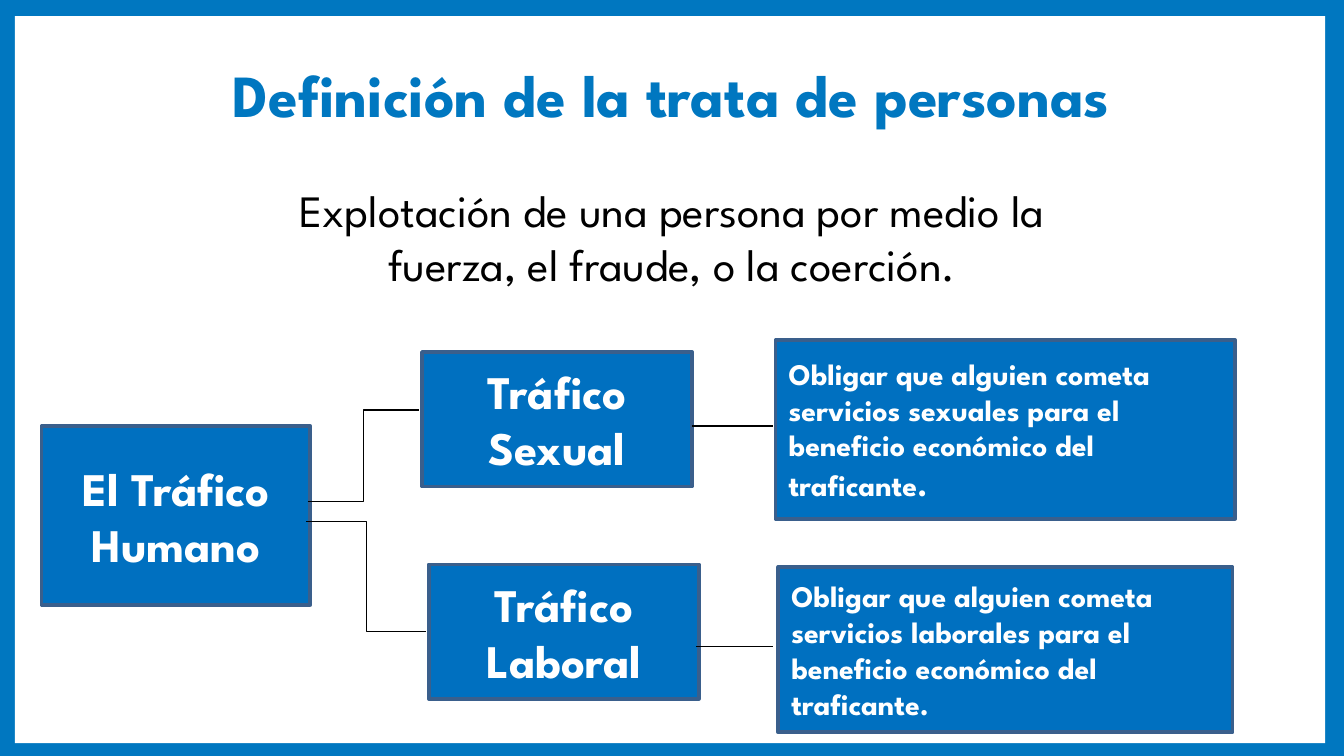
from dataclasses import dataclass

from lxml.etree import SubElement
from pptx import Presentation
from pptx.dml.color import RGBColor
from pptx.enum.shapes import MSO_CONNECTOR, MSO_SHAPE
from pptx.enum.text import MSO_ANCHOR, PP_ALIGN
from pptx.oxml.ns import qn
from pptx.util import Inches, Pt


@dataclass(frozen=True)
class Theme:
    font: str = "League Spartan"
    frame: RGBColor = RGBColor(0x00, 0x77, 0xC0)
    box: RGBColor = RGBColor(0x00, 0x70, 0xC0)
    outline: RGBColor = RGBColor(0x3A, 0x5F, 0x8C)
    white: RGBColor = RGBColor(0xFF, 0xFF, 0xFF)
    black: RGBColor = RGBColor(0x00, 0x00, 0x00)
    title_size: int = 32
    label_size: int = 25
    body_size: int = 24
    period_size: int = 18
    detail_size: int = 16


theme = Theme()


def write(box, text, size, color=theme.white, bold=True,
          align=PP_ALIGN.CENTER, anchor=MSO_ANCHOR.MIDDLE):
    """Add a run to the first paragraph of a box and format it."""
    frame = box.text_frame
    frame.word_wrap = True
    frame.vertical_anchor = anchor
    para = frame.paragraphs[0]
    para.alignment = align
    span = para.add_run()
    span.text = text
    span.font.name = theme.font
    span.font.size = Pt(size)
    span.font.bold = bold
    span.font.color.rgb = color


def add_box(left, top, width, height, fill=theme.box, outline=theme.outline):
    box = page.shapes.add_shape(MSO_SHAPE.RECTANGLE, Inches(left), Inches(top),
                                Inches(width), Inches(height))
    box.shadow.inherit = False
    box.fill.solid()
    box.fill.fore_color.rgb = fill
    if outline is None:
        box.line.fill.background()
    else:
        box.line.color.rgb = outline
        box.line.width = Pt(2)
    return box


# Widescreen 16:9 page
deck = Presentation()
deck.slide_width = Inches(10)
deck.slide_height = Inches(10 * 9 / 16)
page = deck.slides.add_slide(deck.slide_layouts[6])

# Blue frame around a white panel
page.background.fill.solid()
page.background.fill.fore_color.rgb = theme.frame
add_box(0.11, 0.12, 9.75, 5.41, fill=theme.white, outline=None)

# Title and definition
title = page.shapes.add_textbox(Inches(0.5), Inches(0.23), Inches(9), Inches(0.94))
write(title, "Definición de la trata de personas", theme.title_size, color=theme.frame)
definition = page.shapes.add_textbox(Inches(1.7), Inches(1.31), Inches(6.6), Inches(0.91))
write(definition,
      "Explotación de una persona por medio la fuerza, el fraude, o la coerción.",
      theme.body_size, color=theme.black, bold=False, anchor=MSO_ANCHOR.TOP)

# Root and its two branches
labels = [
    ("El Tráfico Humano", 0.31, 3.17, 2, 1.33),
    ("Tráfico Sexual", 3.14, 2.62, 2.01, 1),
    ("Tráfico Laboral", 3.19, 4.2, 2.01, 1),
]
for text, *place in labels:
    write(add_box(*place), text, theme.label_size)

# Explanation of each branch
details = [
    ("sexuales", theme.period_size, 5.77, 2.53, 3.42, 1.33),
    ("laborales", theme.detail_size, 5.79, 4.22, 3.38, 1.23),
]
for service, period_size, *place in details:
    box = add_box(*place)
    sentence = (f"Obligar que alguien cometa servicios {service} "
                "para el beneficio económico del traficante")
    write(box, sentence, theme.detail_size, align=PP_ALIGN.LEFT)
    write(box, ".", period_size, align=PP_ALIGN.LEFT)

# Connecting lines
links = [
    (MSO_CONNECTOR.ELBOW, 2.29, 3.73, 3.12, 3.05),
    (MSO_CONNECTOR.ELBOW, 2.28, 3.88, 3.17, 4.7),
    (MSO_CONNECTOR.STRAIGHT, 5.15, 3.17, 5.75, 3.17),
    (MSO_CONNECTOR.STRAIGHT, 5.18, 4.81, 5.75, 4.81),
]
for kind, *ends in links:
    link = page.shapes.add_connector(kind, *[Inches(end) for end in ends])
    link.line.color.rgb = theme.black
    link.line.width = Pt(0.75)
    SubElement(link._element.spPr, qn("a:effectLst"))

deck.save("out.pptx")
